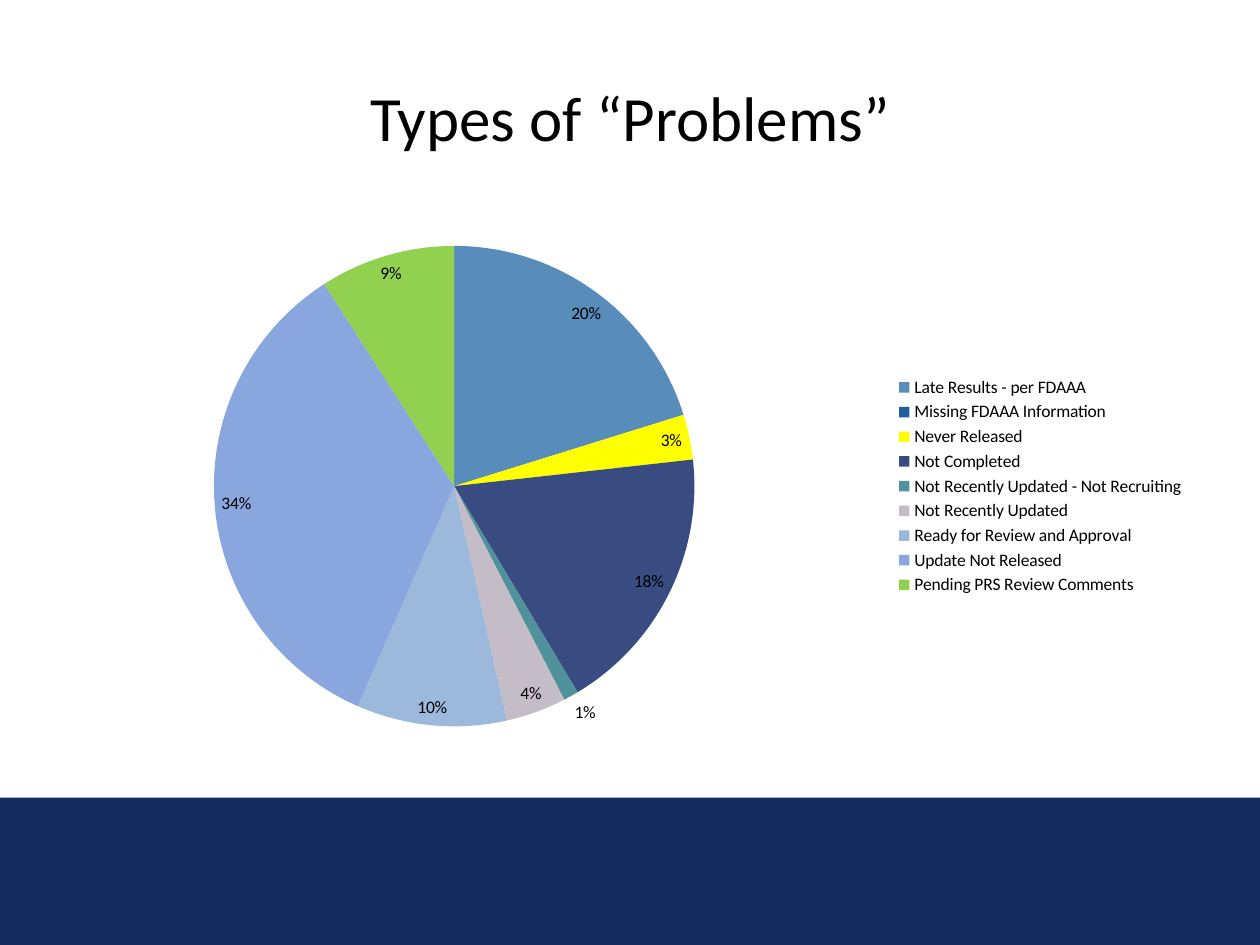
from lxml import etree
from pptx import Presentation
from pptx.chart.data import CategoryChartData
from pptx.dml.color import RGBColor
from pptx.enum.chart import XL_CHART_TYPE as ChartType
from pptx.enum.chart import XL_LABEL_POSITION as LabelPosition
from pptx.enum.chart import XL_LEGEND_POSITION as LegendPosition
from pptx.enum.shapes import MSO_SHAPE as ShapeType
from pptx.enum.text import MSO_ANCHOR as Anchor
from pptx.enum.text import PP_ALIGN as Align
from pptx.oxml.ns import qn
from pptx.util import Inches, Pt

WIDTH, HEIGHT = Inches(10), Inches(7.5)
MARGIN = 0.05
FONT = "Calibri"
BLACK = RGBColor(0x00, 0x00, 0x00)
NAVY = RGBColor(0x12, 0x2A, 0x5D)

PROBLEMS = [
    ("Late Results - per FDAAA", 20, RGBColor(0x58, 0x8C, 0xBA)),
    ("Missing FDAAA Information", 0, RGBColor(0x1F, 0x5F, 0xA0)),
    ("Never Released", 3, RGBColor(0xFF, 0xFF, 0x00)),
    ("Not Completed", 18, RGBColor(0x38, 0x4C, 0x81)),
    ("Not Recently Updated - Not Recruiting", 1, RGBColor(0x50, 0x92, 0x9C)),
    ("Not Recently Updated", 4, RGBColor(0xC4, 0xBC, 0xC6)),
    ("Ready for Review and Approval", 10, RGBColor(0x9C, 0xB9, 0xDC)),
    ("Update Not Released", 34, RGBColor(0x8A, 0xA6, 0xDF)),
    ("Pending PRS Review Comments", 9, RGBColor(0x92, 0xD0, 0x50)),
]
PLOT_LAYOUT = {"x": 0.03, "y": 0.05, "w": 0.63, "h": 0.9}


def area(left, top, width, height):
    """Turn shares of the slide into lengths."""
    return (int(WIDTH * left), int(HEIGHT * top),
            int(WIDTH * width), int(HEIGHT * height))


def add_band(slide, top):
    shape = slide.shapes.add_shape(ShapeType.RECTANGLE, *area(0, top, 1, 1 - top))
    shape.shadow.inherit = False
    shape.fill.solid()
    shape.fill.fore_color.rgb = NAVY
    shape.line.fill.background()


def add_title(slide, text):
    frame = slide.shapes.add_textbox(*area(MARGIN, 0.04, 1 - 2 * MARGIN, 0.167)).text_frame
    frame.word_wrap = True
    frame.vertical_anchor = Anchor.MIDDLE
    paragraph = frame.paragraphs[0]
    paragraph.alignment = Align.CENTER
    run = paragraph.add_run()
    run.text = text
    run.font.name = FONT
    run.font.size = Pt(36)
    run.font.color.rgb = BLACK


def add_value(parent, tag, value):
    etree.SubElement(parent, qn(tag)).set("val", str(value))


def place_plot(chart, layout):
    """Fix the inner plot area, given as shares of the chart."""
    plot_area = chart.plots[0]._element.getparent()
    for old in plot_area.findall(qn("c:layout")):
        plot_area.remove(old)
    element = etree.Element(qn("c:layout"))
    plot_area.insert(0, element)
    manual = etree.SubElement(element, qn("c:manualLayout"))
    add_value(manual, "c:layoutTarget", "inner")
    for key in "xy":
        add_value(manual, f"c:{key}Mode", "edge")
    for key, share in layout.items():
        add_value(manual, f"c:{key}", share)


def add_percent_labels(series):
    """Label each slice with its percentage, leaving out the empty ones."""
    labels = series.data_labels
    labels.show_value = False
    labels.show_percentage = True
    labels.number_format = "0%"
    labels.number_format_is_linked = False
    labels.position = LabelPosition.BEST_FIT
    empty = [index for index, value in enumerate(series.values) if value == 0]
    for order, index in enumerate(empty):
        label = etree.Element(qn("c:dLbl"))
        add_value(label, "c:idx", index)
        add_value(label, "c:delete", 1)
        labels._element.insert(order, label)


def add_pie(slide, problems):
    data = CategoryChartData()
    data.categories = [name for name, _, _ in problems]
    data.add_series("Series 1", [value for _, value, _ in problems])
    box = area(MARGIN, 0.232, 1 - 2 * MARGIN, 0.565)
    chart = slide.shapes.add_chart(ChartType.PIE, *box, data).chart
    chart.has_title = False
    chart.font.name = FONT
    chart.font.size = Pt(10)
    chart.font.color.rgb = BLACK
    chart.has_legend = True
    chart.legend.position = LegendPosition.RIGHT
    chart.legend.include_in_layout = False
    plot = chart.plots[0]
    plot.vary_by_categories = True
    series = plot.series[0]
    for index, (_, _, color) in enumerate(problems):
        fill = series.points[index].format.fill
        fill.solid()
        fill.fore_color.rgb = color
    add_percent_labels(series)
    place_plot(chart, PLOT_LAYOUT)


def main():
    presentation = Presentation()
    presentation.slide_width, presentation.slide_height = WIDTH, HEIGHT
    slide = presentation.slides.add_slide(presentation.slide_layouts[6])
    add_band(slide, 0.844)
    add_title(slide, "Types of “Problems”")
    add_pie(slide, PROBLEMS)
    presentation.save("out.pptx")


if __name__ == "__main__":
    main()
